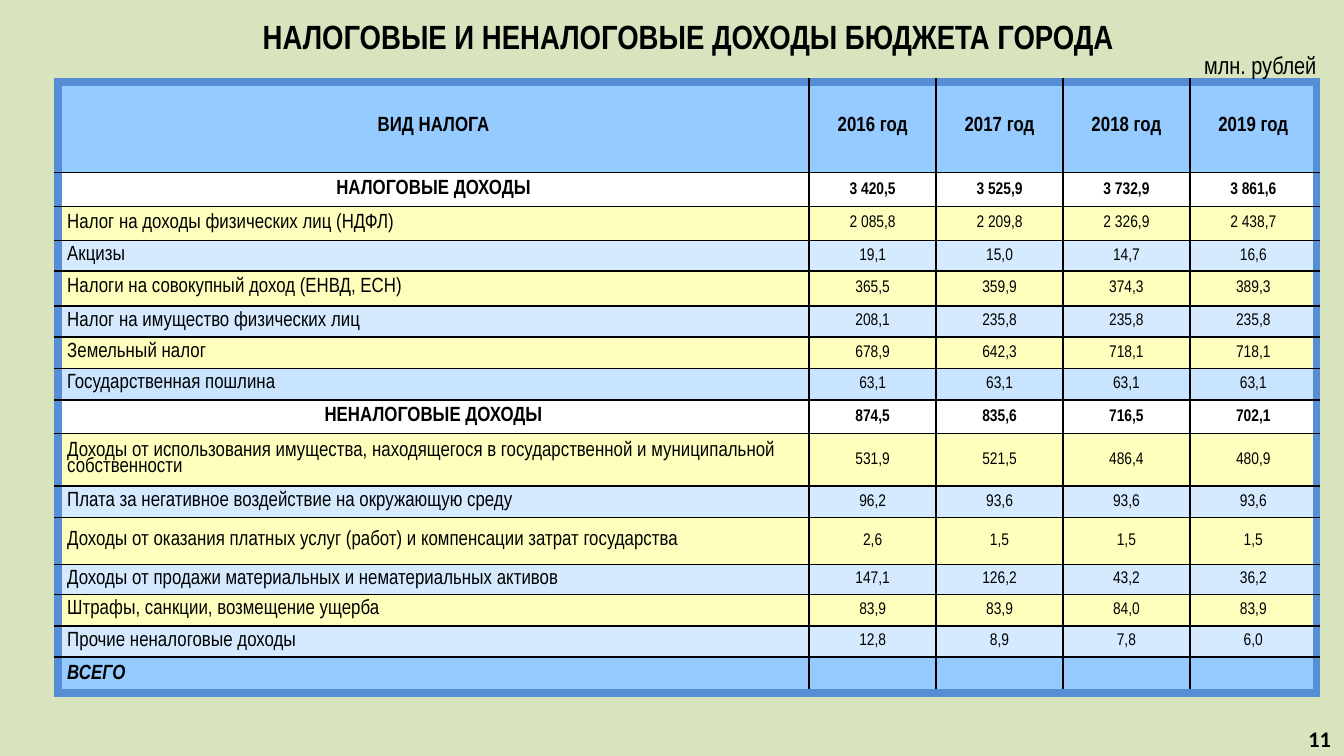
from pptx import Presentation
from pptx.dml.color import RGBColor as RGB
from pptx.enum.text import MSO_ANCHOR as ANCHOR, PP_ALIGN as ALIGN
from pptx.oxml import parse_xml
from pptx.oxml.ns import nsdecls
from pptx.util import Pt

COLORS = {
    "background": "D7E4BD", "text": "000000", "grid": "000000",
    "frame": "558ED5", "header": "96CBFF", "section": "FFFFFF",
    "yellow": "FFFFBD", "blue": "D5EAFF", "duty": "C9E4FF", "total": "96CBFF",
}
NARROW = "Arial Narrow"

# Content: row kind, height, label, values by year
ROWS = [
    ("header", 48.6, "ВИД НАЛОГА", ["2016 год", "2017 год", "2018 год", "2019 год"]),
    ("section", 18.2, "НАЛОГОВЫЕ ДОХОДЫ", ["3 420,5", "3 525,9", "3 732,9", "3 861,6"]),
    ("yellow", 18.2, "Налог на доходы физических лиц (НДФЛ)",
     ["2 085,8", "2 209,8", "2 326,9", "2 438,7"]),
    ("blue", 16.2, "Акцизы", ["19,1", "15,0", "14,7", "16,6"]),
    ("yellow", 18.8, "Налоги на совокупный доход (ЕНВД, ЕСН)",
     ["365,5", "359,9", "374,3", "389,3"]),
    ("blue", 16.8, "Налог на имущество физических лиц",
     ["208,1", "235,8", "235,8", "235,8"]),
    ("yellow", 16.8, "Земельный налог", ["678,9", "642,3", "718,1", "718,1"]),
    ("duty", 16.8, "Государственная пошлина", ["63,1", "63,1", "63,1", "63,1"]),
    ("section", 18, "НЕНАЛОГОВЫЕ ДОХОДЫ", ["874,5", "835,6", "716,5", "702,1"]),
    ("yellow", 28.2, "Доходы от использования имущества, находящегося в "
     "государственной и муниципальной собственности",
     ["531,9", "521,5", "486,4", "480,9"]),
    ("blue", 16.8, "Плата за негативное воздействие на окружающую среду",
     ["96,2", "93,6", "93,6", "93,6"]),
    ("yellow", 25.2, "Доходы от оказания платных услуг (работ) и компенсации "
     "затрат государства", ["2,6", "1,5", "1,5", "1,5"]),
    ("blue", 16.2, "Доходы от продажи материальных и нематериальных активов",
     ["147,1", "126,2", "43,2", "36,2"]),
    ("yellow", 16.8, "Штрафы, санкции, возмещение ущерба",
     ["83,9", "83,9", "84,0", "83,9"]),
    ("blue", 16.8, "Прочие неналоговые доходы", ["12,8", "8,9", "7,8", "6,0"]),
    ("total", 19.2, "ВСЕГО", ["", "", "", ""]),
]
COLUMN_WIDTHS = [402.5] + [68] * 4

# Text, box (left, top, width, height), alignment, anchor, font
CAPTIONS = [
    ("млн. рублей", (638, 23, 82, 23), ALIGN.JUSTIFY, ANCHOR.MIDDLE,
     {"name": NARROW, "size": Pt(13)}),
    ("НАЛОГОВЫЕ И НЕНАЛОГОВЫЕ ДОХОДЫ БЮДЖЕТА ГОРОДА", (59.8, 6.5, 617.8, 26),
     ALIGN.CENTER, ANCHOR.MIDDLE, {"name": NARROW, "size": Pt(18), "bold": True}),
    ("11", (671.8, 385.2, 48.2, 18.7), ALIGN.RIGHT, ANCHOR.TOP,
     {"name": "Calibri", "size": Pt(11.9), "bold": True}),
]


def set_attributes(target, values):
    for name, value in values.items():
        setattr(target, name, value)


def write(paragraph, text, align, font):
    paragraph.alignment = align
    run = paragraph.add_run()
    run.text = text
    set_attributes(run.font, font)
    run.font.color.rgb = RGB.from_string(COLORS["text"])


def add_border(cell, side, on_frame):
    color, width = (COLORS["frame"], 4.5) if on_frame else (COLORS["grid"], 1)
    cell._tc.get_or_add_tcPr().append(parse_xml(
        f'<a:ln{side} {nsdecls("a")} w="{Pt(width)}"><a:solidFill>'
        f'<a:srgbClr val="{color}"/></a:solidFill></a:ln{side}>'))


def fill_cell(cell, kind, text, is_label):
    bold = kind in ("header", "section", "total")
    padding = Pt(3) if kind in ("header", "section", "total") else 0
    set_attributes(cell, {
        "vertical_anchor": ANCHOR.MIDDLE, "margin_left": Pt(5),
        "margin_right": Pt(5), "margin_top": padding, "margin_bottom": padding})
    cell.fill.solid()
    cell.fill.fore_color.rgb = RGB.from_string(COLORS[kind])

    paragraph = cell.text_frame.paragraphs[0]
    size = 11 if is_label or kind == "header" else 9
    if not text:
        # Keeps an empty cell from stretching its row
        paragraph._p.get_or_add_endParaRPr().set("sz", str(size * 100))
        return
    if size == 11:
        paragraph.line_spacing = 0.8
    centred = not is_label or kind in ("header", "section")
    write(paragraph, text, ALIGN.CENTER if centred else ALIGN.LEFT,
          {"name": NARROW, "size": Pt(size), "bold": bold, "italic": kind == "total"})


prs = Presentation()
prs.slide_width, prs.slide_height = Pt(720), Pt(405)
slide = prs.slides.add_slide(prs.slide_layouts[6])
slide.background.fill.solid()
slide.background.fill.fore_color.rgb = RGB.from_string(COLORS["background"])

# Revenue table
heights = [height for _, height, _, _ in ROWS]
revenue = slide.shapes.add_table(
    len(ROWS), len(COLUMN_WIDTHS), Pt(31), Pt(43.9),
    Pt(sum(COLUMN_WIDTHS)), Pt(sum(heights))).table
set_attributes(revenue, {"first_row": False, "horz_banding": False})
for column, width in zip(revenue.columns, COLUMN_WIDTHS):
    column.width = Pt(width)
last_row, last_column = len(ROWS) - 1, len(COLUMN_WIDTHS) - 1
for r, (kind, height, label, values) in enumerate(ROWS):
    revenue.rows[r].height = Pt(height)
    for c, text in enumerate([label, *values]):
        cell = revenue.cell(r, c)
        # Borders precede the fill in the cell properties
        for side, on_frame in (("L", c == 0), ("R", c == last_column),
                               ("T", r == 0), ("B", r == last_row)):
            add_border(cell, side, on_frame)
        fill_cell(cell, kind, text, c == 0)

# Unit, title and page number
for text, box, align, anchor, font in CAPTIONS:
    frame = slide.shapes.add_textbox(*map(Pt, box)).text_frame
    set_attributes(frame, {"word_wrap": True, "vertical_anchor": anchor})
    write(frame.paragraphs[0], text, align, font)

prs.save("out.pptx")
